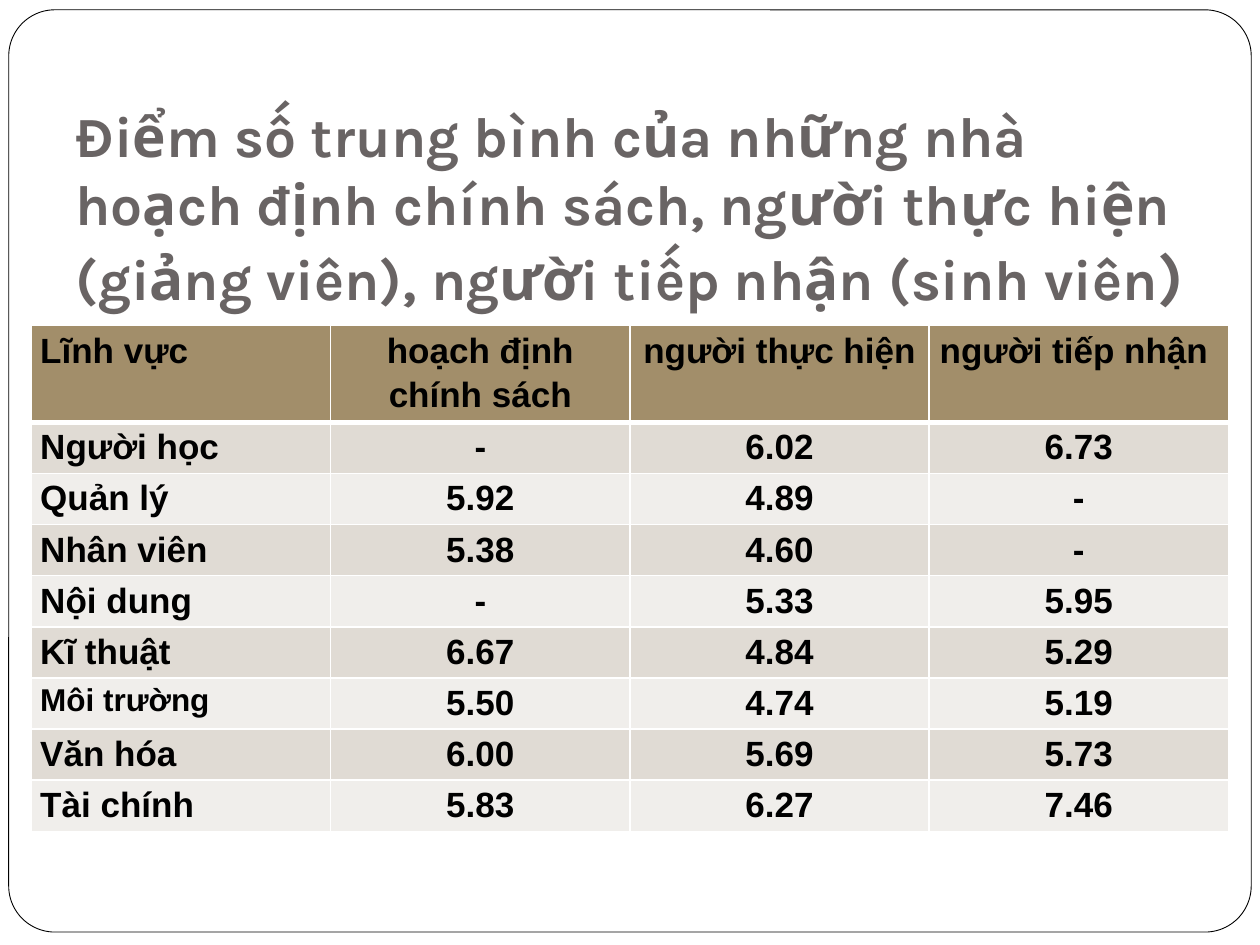
from lxml import etree
from pptx import Presentation
from pptx.dml.color import RGBColor
from pptx.enum.shapes import MSO_SHAPE
from pptx.enum.text import MSO_ANCHOR, PP_ALIGN
from pptx.oxml.ns import qn
from pptx.util import Pt

ROUNDED = MSO_SHAPE.ROUNDED_RECTANGLE
BOTTOM = MSO_ANCHOR.BOTTOM
LEFT, CENTER = PP_ALIGN.LEFT, PP_ALIGN.CENTER

WHITE = RGBColor(0xFF, 0xFF, 0xFF)
BLACK = RGBColor(0, 0, 0)
GRAY = RGBColor(0x69, 0x64, 0x64)
BROWN = RGBColor(0xA2, 0x8E, 0x6A)
BANDS = (RGBColor(0xE0, 0xDB, 0xD4), RGBColor(0xF0, 0xEE, 0xEB))

TITLE = [
    ("Điểm số trung bình của những nhà hoạch định chính sách, người thực hiện "
     "(giảng viên), người tiếp nhận (sinh viên", 32.4),
    (")", 36),
]
SCORES = [
    ("Lĩnh vực", "hoạch định chính sách", "người thực hiện ", "người tiếp nhận "),
    ("Người học", "-", "6.02", "6.73"),
    ("Quản lý", "5.92", "4.89", "-"),
    ("Nhân viên", "5.38", "4.60", "-"),
    ("Nội dung", "-", "5.33", "5.95"),
    ("Kĩ thuật", "6.67", "4.84", "5.29"),
    ("Môi trường", "5.50", "4.74", "5.19"),
    ("Văn hóa", "6.00", "5.69", "5.73"),
    ("Tài chính", "5.83", "6.27", "7.46"),
]
SMALL_LABELS = {"Môi trường": 18}


class Deck:
    title_font = "Karla"
    table_font = "Arial"
    table_size = 20

    def __init__(self, width, height):
        self.prs = Presentation()
        self.prs.slide_width, self.prs.slide_height = Pt(width), Pt(height)
        self.s = self.prs.slides.add_slide(self.prs.slide_layouts[6])

    def run(self, p, text, font, size, color):
        r = p.add_run()
        r.text = text
        r.font.name, r.font.size, r.font.bold = font, Pt(size), True
        r.font.color.rgb = color

    def frame(self, x, y, w, h):
        sp = self.s.shapes.add_shape(ROUNDED, Pt(x), Pt(y), Pt(w), Pt(h))
        sp.adjustments[0] = 0.05
        sp.shadow.inherit = False
        sp.fill.solid()
        sp.fill.fore_color.rgb = WHITE
        sp.line.color.rgb = BLACK
        sp.line.width = Pt(0.5)

    def title(self, runs, x, y, w, h):
        tf = self.s.shapes.add_textbox(Pt(x), Pt(y), Pt(w), Pt(h)).text_frame
        tf.word_wrap = True
        tf.vertical_anchor = BOTTOM
        tf.margin_bottom = Pt(7.2)
        for text, size in runs:
            self.run(tf.paragraphs[0], text, self.title_font, size, GRAY)

    def borders(self, cell, bottom):
        tcPr = cell._tc.get_or_add_tcPr()
        widths = {"a:lnL": 1, "a:lnR": 1, "a:lnT": 1, "a:lnB": bottom}
        for i, (tag, width) in enumerate(widths.items()):
            ln = etree.Element(qn(tag), w=str(Pt(width)))
            fill = etree.SubElement(ln, qn("a:solidFill"))
            etree.SubElement(fill, qn("a:srgbClr"), val=str(WHITE))
            tcPr.insert(i, ln)

    def cell(self, cell, text, fill, align, bottom):
        cell.margin_left = cell.margin_right = Pt(5)
        cell.margin_top = cell.margin_bottom = 0
        cell.fill.solid()
        cell.fill.fore_color.rgb = fill
        self.borders(cell, bottom)
        p = cell.text_frame.paragraphs[0]
        p.alignment, p.line_spacing = align, 1.15
        size = SMALL_LABELS.get(text, self.table_size)
        self.run(p, text, self.table_font, size, BLACK)

    def table(self, rows, x, y, w, row_height):
        shape = self.s.shapes.add_table(len(rows), len(rows[0]), Pt(x), Pt(y),
                                        Pt(w), Pt(row_height * len(rows)))
        table = shape.table
        for i, row in enumerate(rows):
            table.rows[i].height = Pt(row_height)
            fill = BANDS[(i - 1) % 2] if i else BROWN
            for j, text in enumerate(row):
                self.cell(table.cell(i, j), text, fill,
                          CENTER if j else LEFT, 1 if i else 3)


def main():
    deck = Deck(720, 540)
    deck.frame(5, 5.6, 710, 527)
    deck.title(TITLE, 36, 96, 660, 90)
    deck.table(SCORES, 18, 186, 684, 29.25)
    deck.prs.save("out.pptx")


if __name__ == "__main__":
    main()
